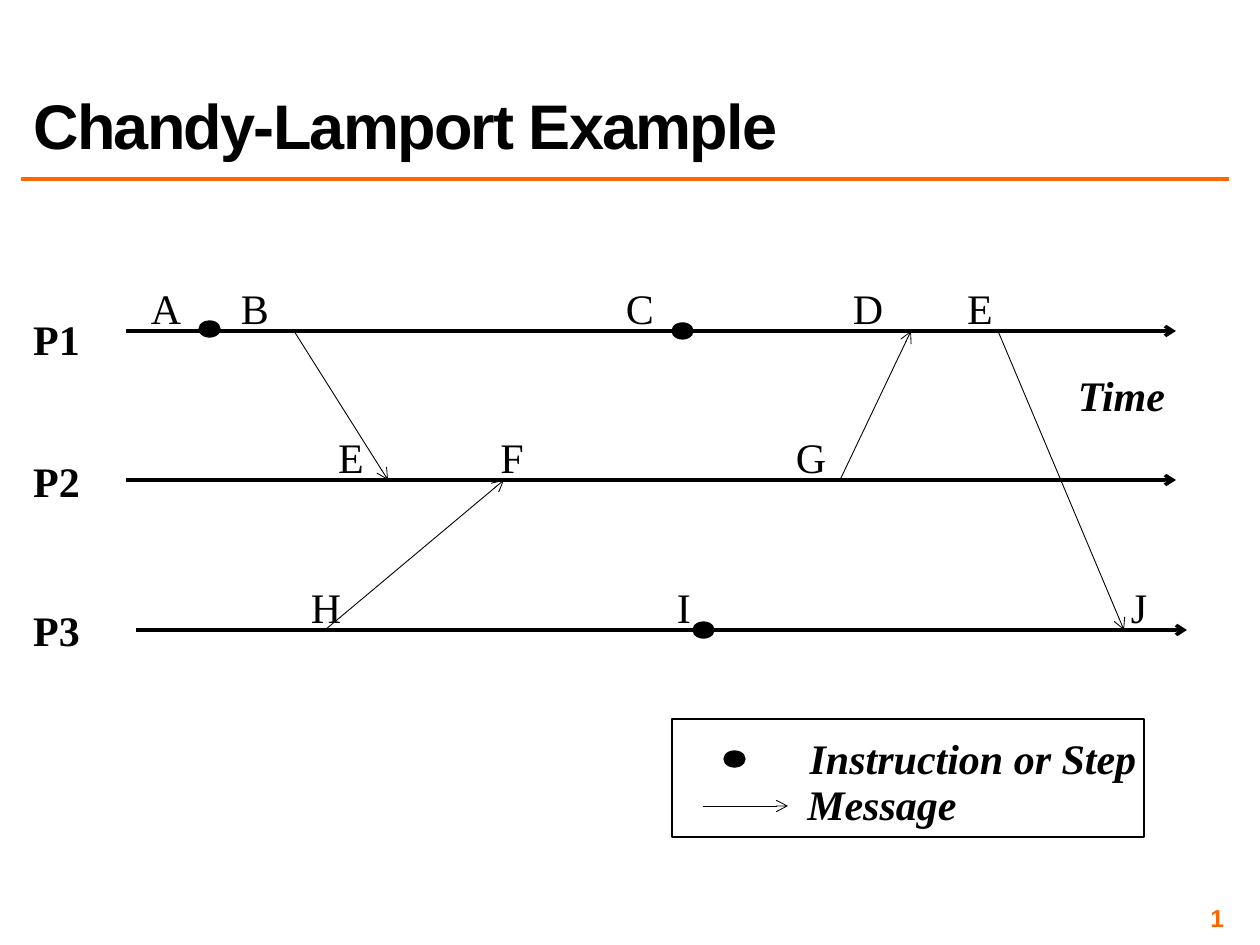
"""Build the Chandy-Lamport example slide: three process timelines with events and messages."""
from lxml.etree import SubElement
from pptx import Presentation
from pptx.dml.color import RGBColor
from pptx.enum.shapes import MSO_CONNECTOR, MSO_SHAPE
from pptx.enum.text import MSO_ANCHOR, PP_ALIGN
from pptx.oxml.ns import qn
from pptx.util import Emu, Pt

BLACK = RGBColor(0x00, 0x00, 0x00)
ORANGE = RGBColor(0xFF, 0x66, 0x00)
SCALE = 914400 / 126
LABEL = {"name": "Times New Roman", "size": Pt(24), "bold": True, "italic": False}
LEGEND = {**LABEL, "italic": True}
EVENT = {**LABEL, "bold": False}
TITLE = {"name": "Arial", "size": Pt(36), "bold": True}
NUMBER = {"name": "Arial", "size": Pt(14), "bold": True}


def px(*lengths):
    return [Emu(round(length * SCALE)) for length in lengths]


def add_text(page, place, text, font, color=BLACK, align=PP_ALIGN.CENTER, **frame_format):
    box = page.shapes.add_textbox(*px(*place))
    for name, value in {"word_wrap": False, **frame_format}.items():
        setattr(box.text_frame, name, value)
    para = box.text_frame.paragraphs[0]
    para.alignment = align
    span = para.add_run()
    span.text = text
    for name, value in font.items():
        setattr(span.font, name, value)
    span.font.color.rgb = color
    return para


deck = Presentation()
deck.slide_width, deck.slide_height = px(1260, 945)
page = deck.slides.add_slide(deck.slide_layouts[6])

P1, P2, P3 = 331, 480, 630
timelines = [(126, P1, 1176, P1), (126, P2, 1176, P2), (136, P3, 1187, P3)]
messages = [
    (998, P1, 1124, P3),
    (325, P3, 504, P2),
    (294, P1, 388, P2),
    (840, P2, 911, P1),
    (703, 806, 788, 806),
]
lines = [((21, 179, 1229, 179), ORANGE, 2, False)]
lines += [(ends, BLACK, 2, True) for ends in timelines]
lines += [(ends, BLACK, 0.5, True) for ends in messages]
for ends, color, width, arrow in lines:
    line = page.shapes.add_connector(MSO_CONNECTOR.STRAIGHT, *px(*ends))
    line.line.color.rgb = color
    line.line.width = Pt(width)
    if arrow:
        SubElement(line.line._get_or_add_ln(), qn("a:tailEnd"), type="arrow")
    SubElement(line._element.spPr, qn("a:effectLst"))

dots = [(199, 321), (672, 323), (693, 622), (724, 751)]
shapes = [(MSO_SHAPE.OVAL, (left, top, 21, 16)) for left, top in dots]
shapes.append((MSO_SHAPE.RECTANGLE, (672, 719, 472, 118)))
for kind, place in shapes:
    shape = page.shapes.add_shape(kind, *px(*place))
    shape.shadow.inherit = False
    shape.line.color.rgb = BLACK
    shape.line.width = Pt(0.75)
    if kind == MSO_SHAPE.OVAL:
        shape.fill.solid()
        shape.fill.fore_color.rgb = BLACK
    else:
        shape.fill.background()

labels = [
    ("P1", (20, 307, 73, 63), LABEL),
    ("P2", (20, 449, 73, 63), LABEL),
    ("P3", (20, 598, 73, 63), LABEL),
    ("Time", (1065, 363, 113, 63), LEGEND),
    ("Instruction or Step", (794, 726, 358, 63), LEGEND),
    ("Message", (794, 772, 176, 63), LEGEND),
]
for text, place, font in labels:
    add_text(page, place, text, font)

event_rows = [
    ((136, 276, 955, 63), {"A": 166, "B": 255, "C": 640, "D": 868, "E": 980}),
    ((42, 425, 955, 63), {"E": 351, "F": 512, "G": 811}),
    ((210, 575, 955, 63), {"H": 326, "I": 684, "J": 1139}),
]
for place, events in event_rows:
    text = "".join("\t" + letter for letter in events)
    para = add_text(page, place, text, EVENT, align=PP_ALIGN.LEFT,
                    word_wrap=True, margin_left=0, margin_right=0)
    stops = SubElement(para._p.get_or_add_pPr(), qn("a:tabLst"))
    for center in events.values():
        SubElement(stops, qn("a:tab"), pos=str(px(center - place[0])[0]), algn="ctr")

title = add_text(page, (21, 21, 1207, 147), "Chandy-Lamport Example", TITLE,
                 align=PP_ALIGN.LEFT, word_wrap=True, vertical_anchor=MSO_ANCHOR.BOTTOM)
title.line_spacing = 0.8
title.runs[0].font._element.set("spc", "-100")

margins = {"margin_" + side: px(5)[0] for side in ("left", "top", "right", "bottom")}
add_text(page, (935, 903, 294, 29), "1", NUMBER, ORANGE, PP_ALIGN.RIGHT,
         word_wrap=True, vertical_anchor=MSO_ANCHOR.MIDDLE, **margins)

deck.save("out.pptx")
